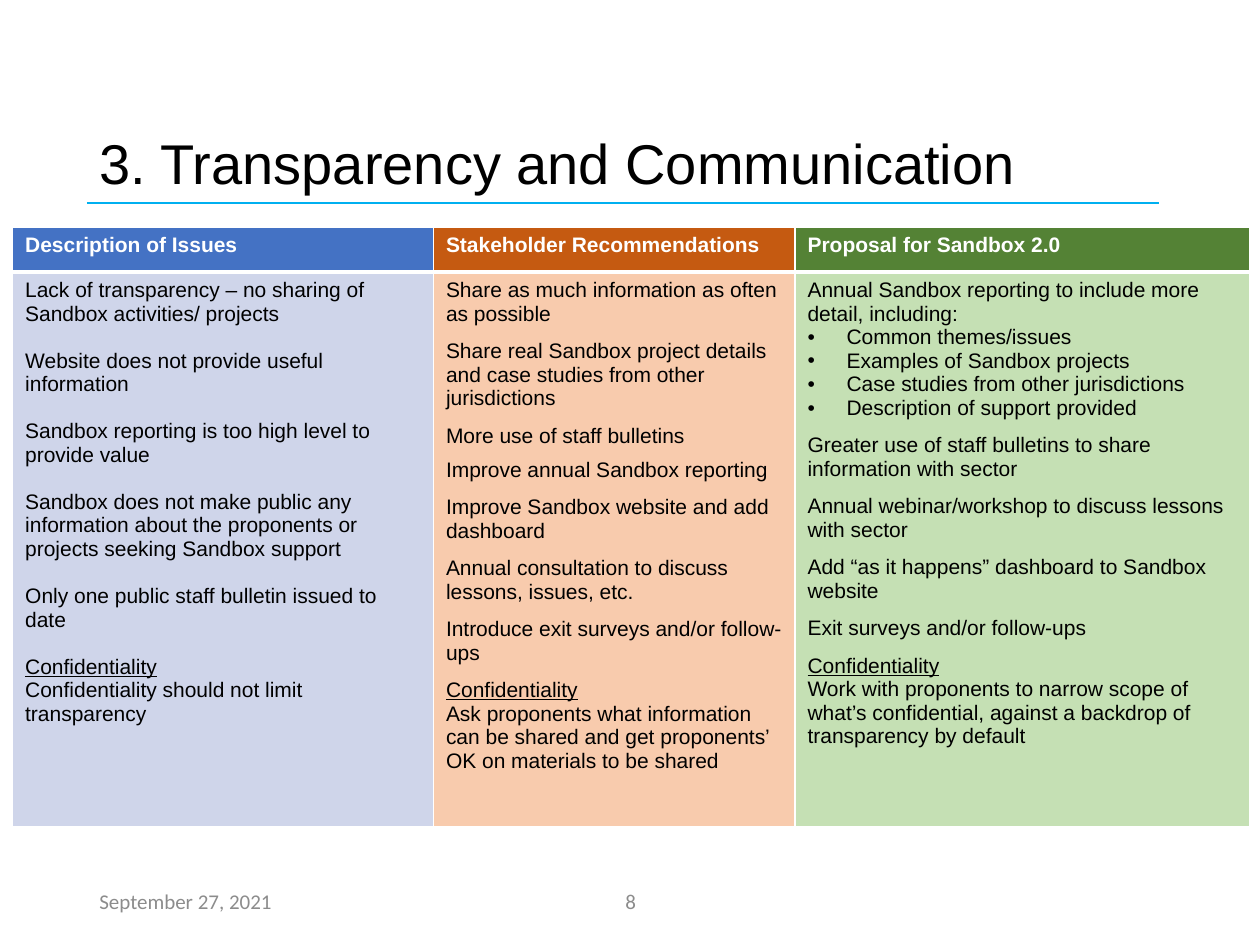
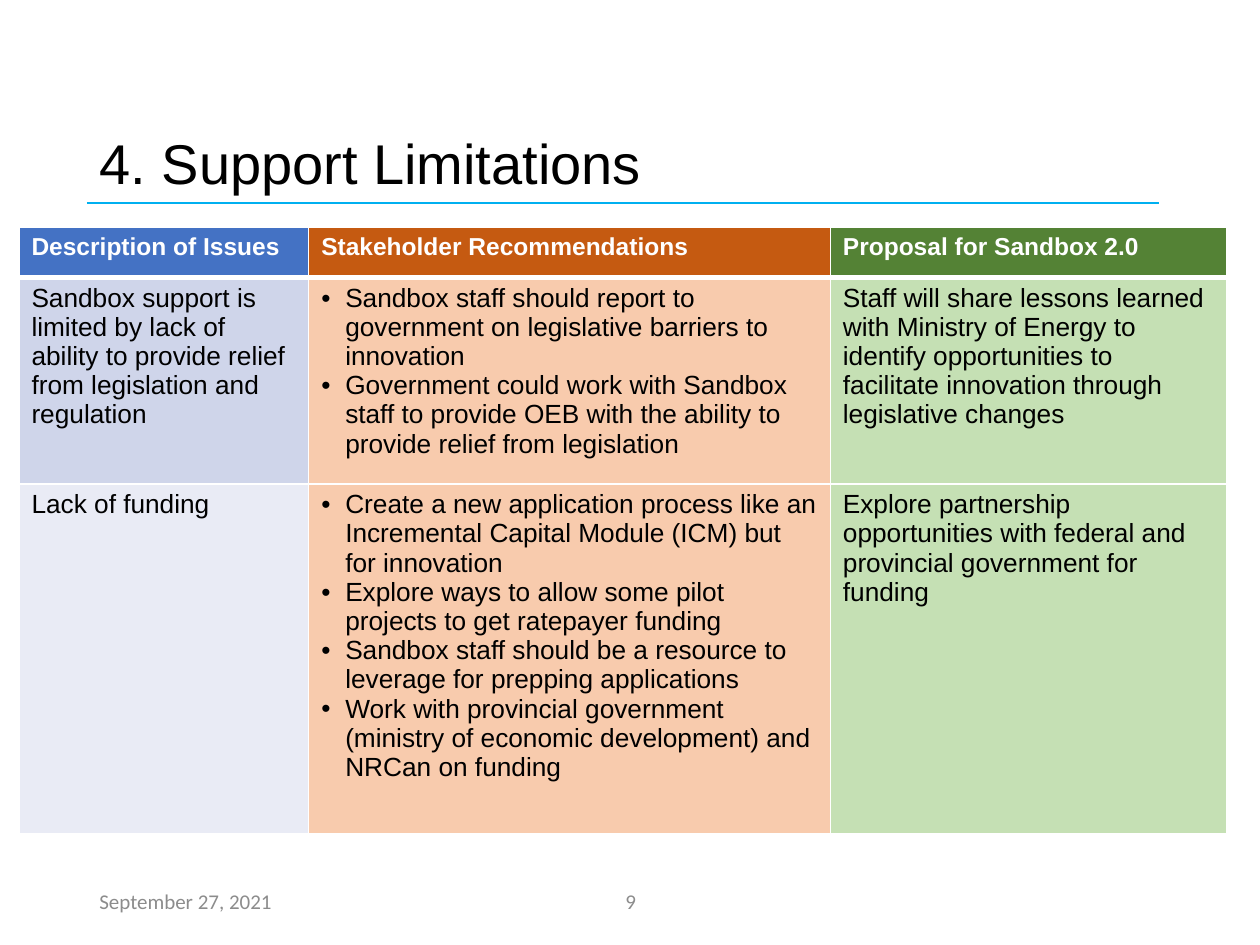
from dataclasses import dataclass

from lxml.etree import SubElement
from pptx import Presentation
from pptx.dml.color import RGBColor as Rgb
from pptx.enum.shapes import MSO_CONNECTOR as Connector
from pptx.enum.text import MSO_ANCHOR as Anchor, MSO_AUTO_SIZE as AutoSize, PP_ALIGN as Align
from pptx.oxml import parse_xml
from pptx.oxml.ns import nsdecls, qn
from pptx.util import Pt

PX = 9144


@dataclass(frozen=True)
class Theme:
    """Colours, fonts and type sizes of the deck."""
    ink: str = "000000"
    paper: str = "FFFFFF"
    rule: str = "00B0F0"
    muted: str = "8C8C8C"
    headers: tuple = ("4472C4", "C55A11", "548235")
    bands: tuple = (("CFD5EA", "F8CBAD", "C5E0B4"), ("E9EBF5", "F8CBAD", "C5E0B4"))
    font: str = "Arial"
    footer_font: str = "Calibri"
    title_size: int = 32
    footer_size: int = 12
    rule_width: float = 1.5
    border: int = 1
    header_border: int = 3


@dataclass(frozen=True)
class Item:
    """One paragraph of a table cell; gap is the space before in points."""
    text: str
    gap: float = 0
    bullet: bool = False
    underline: bool = False


def spaced(gap, *texts):
    """Return plain paragraphs, each set off by the same gap."""
    return [Item(text, gap) for text in texts]


def bullets(*texts):
    """Return bulleted paragraphs."""
    return [Item(text, bullet=True) for text in texts]


def confidentiality(gap, text):
    """Return the underlined closing heading and its text."""
    return [Item("Confidentiality", gap, underline=True), Item(text)]


def apply(target, formats):
    """Set every attribute named in formats on the target."""
    for name, value in formats.items():
        setattr(target, name, value)


class Deck:
    """Holds the theme and the current slide, and draws each kind of element."""

    def __init__(self, theme):
        self.theme = theme
        self.prs = Presentation()
        apply(self.prs, {"slide_width": 1000 * PX, "slide_height": 750 * PX})
        self.slide = None

    def add_text(self, paragraph, text, size, color, font=None, **formats):
        """Add one formatted run to a paragraph."""
        run = paragraph.add_run()
        run.text = text
        apply(run.font, {"name": font or self.theme.font, "size": Pt(size), **formats})
        run.font.color.rgb = Rgb.from_string(color)

    def new_slide(self, heading, number):
        """Start a slide with its title, rule and footer."""
        self.slide = self.prs.slides.add_slide(self.prs.slide_layouts[5])
        self.rule(69, 161, 920)
        self.title(heading)
        self.footer(69, 225, "September 27, 2021", Align.LEFT)
        self.footer(466, 69, str(number), Align.CENTER)

    def title(self, heading):
        """Place and format the title placeholder."""
        title = self.slide.shapes.title
        apply(title, {"left": 69 * PX, "top": 16 * PX, "width": 862 * PX, "height": 145 * PX})
        frame = title.text_frame
        apply(frame, {"vertical_anchor": Anchor.BOTTOM, "auto_size": AutoSize.NONE,
                      "word_wrap": True})
        paragraph = frame.paragraphs[0]
        apply(paragraph, {"alignment": Align.LEFT, "line_spacing": 0.9})
        self.add_text(paragraph, heading, self.theme.title_size, self.theme.ink)

    def rule(self, left, top, right):
        """Draw the horizontal line under the title."""
        line = self.slide.shapes.add_connector(
            Connector.STRAIGHT, left * PX, top * PX, right * PX, top * PX)
        line.line.width = Pt(self.theme.rule_width)
        line.line.color.rgb = Rgb.from_string(self.theme.rule)
        SubElement(line._element.spPr, qn("a:effectLst"))

    def footer(self, left, width, text, alignment):
        """Add one footer entry."""
        box = self.slide.shapes.add_textbox(left * PX, 695 * PX, width * PX, 40 * PX)
        apply(box.text_frame, {"word_wrap": True, "vertical_anchor": Anchor.MIDDLE})
        paragraph = box.text_frame.paragraphs[0]
        paragraph.alignment = alignment
        self.add_text(paragraph, text, self.theme.footer_size, self.theme.muted,
                      self.theme.footer_font)

    def borders(self, cell, is_header):
        """Draw the cell borders, with a thick one below the header."""
        widths = {"lnL": self.theme.border, "lnR": self.theme.border}
        if is_header:
            widths["lnT"] = self.theme.border
        widths["lnB"] = self.theme.header_border if is_header else self.theme.border
        for index, (side, width) in enumerate(widths.items()):
            cell._tc.get_or_add_tcPr().insert(index, parse_xml(
                f'<a:{side} {nsdecls("a")} w="{Pt(width)}"><a:solidFill>'
                f'<a:srgbClr val="{self.theme.paper}"/></a:solidFill></a:{side}>'))

    def cell(self, cell, items, fill, size, color, indent, is_header):
        """Fill one table cell with paragraphs."""
        cell.fill.solid()
        cell.fill.fore_color.rgb = Rgb.from_string(fill)
        self.borders(cell, is_header)
        frame = cell.text_frame
        for index, item in enumerate(items):
            paragraph = frame.add_paragraph() if index else frame.paragraphs[0]
            if item.bullet:
                props = paragraph._p.get_or_add_pPr()
                props.set("marL", str(indent * PX))
                props.set("indent", str(-indent * PX))
                SubElement(props, qn("a:buFont")).set("typeface", self.theme.font)
                SubElement(props, qn("a:buChar")).set("char", "•")
            if item.gap and index:
                paragraph.space_before = Pt(item.gap)
            self.add_text(paragraph, item.text, size, color, bold=is_header,
                          underline=item.underline)

    def table(self, left, widths, heights, body, header_size, body_size, indent):
        """Draw the three-column comparison table."""
        table = self.slide.shapes.add_table(
            len(heights), len(widths), left * PX, 180 * PX,
            sum(widths) * PX, sum(heights) * PX).table
        apply(table, {"first_row": False, "horz_banding": False})
        for column, width in zip(table.columns, widths):
            column.width = width * PX
        for row, height in zip(table.rows, heights):
            row.height = height * PX
        for column, heading in enumerate(HEADINGS):
            self.cell(table.cell(0, column), [Item(heading)], self.theme.headers[column],
                      header_size, self.theme.paper, indent, True)
        for row, (contents, fills) in enumerate(zip(body, self.theme.bands), 1):
            for column, (items, fill) in enumerate(zip(contents, fills)):
                self.cell(table.cell(row, column), items, fill, body_size,
                          self.theme.ink, indent, False)


HEADINGS = ("Description of Issues", "Stakeholder Recommendations", "Proposal for Sandbox 2.0")
LINE_GAP, WIDE_GAP, NARROW_GAP = 13.5, 8, 6

TRANSPARENCY = [[
    spaced(LINE_GAP,
           "Lack of transparency – no sharing of Sandbox activities/ projects",
           "Website does not provide useful information",
           "Sandbox reporting is too high level to provide value",
           "Sandbox does not make public any information about the proponents or projects "
           "seeking Sandbox support",
           "Only one public staff bulletin issued to date")
    + confidentiality(LINE_GAP, "Confidentiality should not limit transparency"),
    spaced(WIDE_GAP,
           "Share as much information as often as possible",
           "Share real Sandbox project details and case studies from other jurisdictions",
           "More use of staff bulletins")
    + spaced(NARROW_GAP, "Improve annual Sandbox reporting")
    + spaced(WIDE_GAP,
             "Improve Sandbox website and add dashboard",
             "Annual consultation to discuss lessons, issues, etc.",
             "Introduce exit surveys and/or follow-ups")
    + confidentiality(WIDE_GAP, "Ask proponents what information can be shared and get "
                                "proponents’ OK on materials to be shared"),
    [Item("Annual Sandbox reporting to include more detail, including:")]
    + bullets("Common themes/issues",
              "Examples of Sandbox projects",
              "Case studies from other jurisdictions",
              "Description of support provided")
    + spaced(WIDE_GAP,
             "Greater use of staff bulletins to share information with sector",
             "Annual webinar/workshop to discuss lessons with sector",
             "Add “as it happens” dashboard to Sandbox website",
             "Exit surveys and/or follow-ups")
    + confidentiality(WIDE_GAP, "Work with proponents to narrow scope of what’s confidential, "
                                "against a backdrop of transparency by default"),
]]

SUPPORT = [
    [[Item("Sandbox support is limited by lack of ability to provide relief from legislation "
           "and regulation")],
     bullets("Sandbox staff should report to government on legislative barriers to innovation",
             "Government could work with Sandbox staff to provide OEB with the ability to "
             "provide relief from legislation"),
     [Item("Staff will share lessons learned with Ministry of Energy to identify opportunities "
           "to facilitate innovation through legislative changes")]],
    [[Item("Lack of funding")],
     bullets("Create a new application process like an Incremental Capital Module (ICM) but "
             "for innovation",
             "Explore ways to allow some pilot projects to get ratepayer funding",
             "Sandbox staff should be a resource to leverage for prepping applications",
             "Work with provincial government (ministry of economic development) and NRCan "
             "on funding"),
     [Item("Explore partnership opportunities with federal and provincial government for "
           "funding")]],
]


def main():
    """Build both slides and save the deck."""
    deck = Deck(Theme())
    deck.new_slide("3. Transparency and Communication", 8)
    deck.table(10, (334, 287, 361), (36, 440), TRANSPARENCY, 12, 12, 31)
    deck.new_slide("4. Support Limitations", 9)
    deck.table(15, (230, 414, 315), (40, 164, 278), SUPPORT, 14, 15, 19)
    deck.prs.save("out.pptx")


if __name__ == "__main__":
    main()
